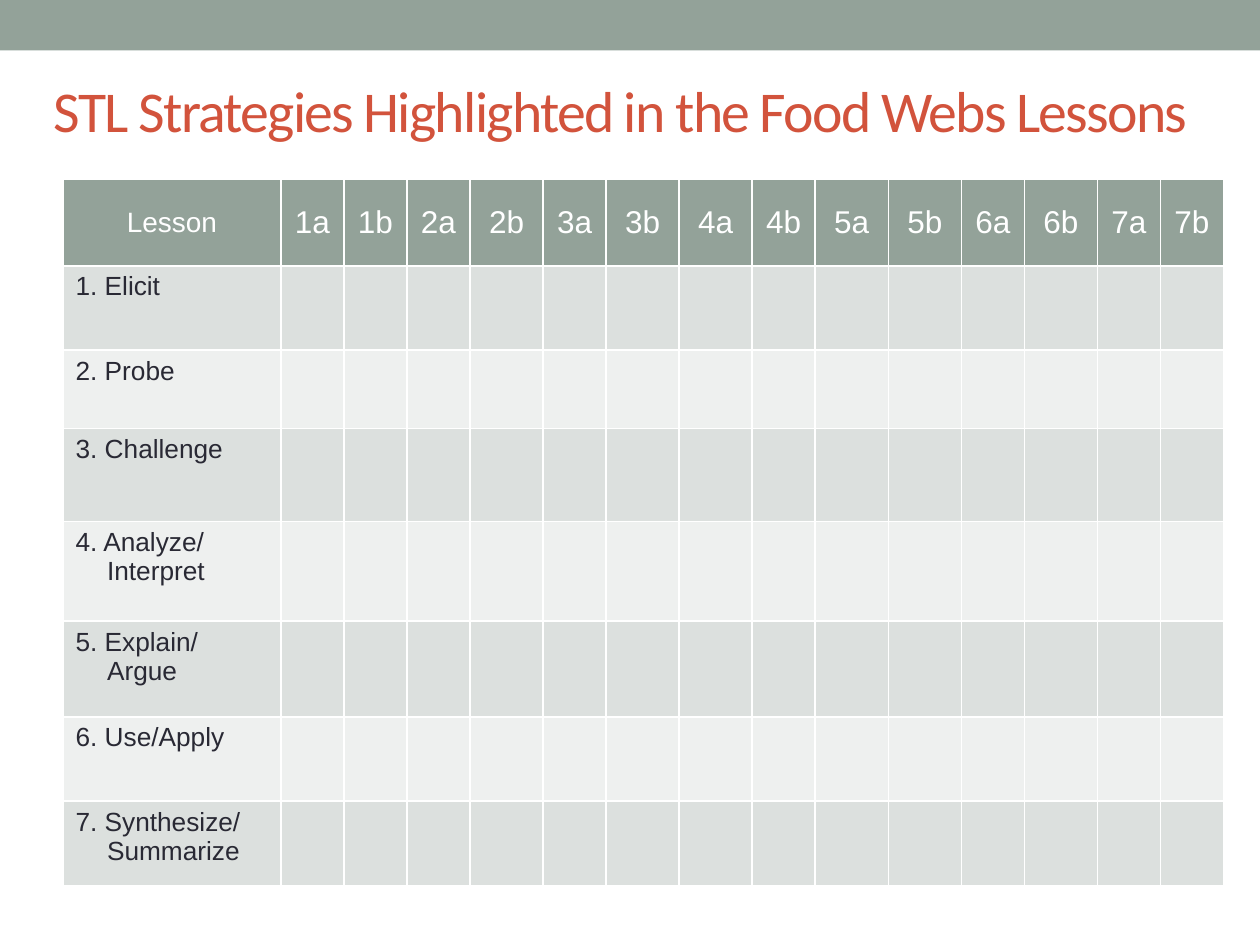
from lxml import etree
from pptx import Presentation
from pptx import util as u
from pptx.dml.color import RGBColor
from pptx.enum import shapes, text
from pptx.oxml.ns import qn

TITLE = "STL Strategies Highlighted in the Food Webs Lessons"
LESSONS = [f"{number}{part}" for number in range(1, 8) for part in "ab"]
STRATEGIES = ["1. Elicit", "2. Probe", "3. Challenge", "4. Analyze/ Interpret",
              "5. Explain/ Argue", "6. Use/Apply", "7. Synthesize/\vSummarize"]

SAGE, RUST, INK, WHITE = "93A299", "D2533C", "292934", "FFFFFF"
BANDS = ["DCE0DE", "EEF0EF"]

STRATEGY_WIDTH, NARROW, WIDE = 1.73, 0.5, 0.58
WIDE_LESSONS = {"2b", "3b", "4a", "5a", "5b", "6b"}
ROW_HEIGHTS = [0.69, 0.67, 0.62, 0.74, 0.79, 0.76, 0.67, 0.67]
TABLE_LEFT, TABLE_TOP = 0.5, 1.42


def color(value):
    return RGBColor.from_string(value)


def write(frame, words, size, fill, font="Arial", align=text.PP_ALIGN.LEFT,
          before=0, after=0, hanging=0, spacing=0):
    """Fill a text frame with one formatted paragraph."""
    paragraph = frame.paragraphs[0]
    paragraph.text = words
    paragraph.alignment = align
    paragraph.space_before, paragraph.space_after = u.Pt(before), u.Pt(after)
    if hanging:
        properties = paragraph._p.get_or_add_pPr()
        properties.set("marL", str(u.Inches(hanging)))
        properties.set("indent", str(-u.Inches(hanging)))
    for run in paragraph.runs:
        run.font.name, run.font.size = font, u.Pt(size)
        run.font.color.rgb = color(fill)
        if spacing:
            run.font._element.set("spc", str(spacing * 100))


def paint(cell, fill):
    """Give a cell its fill and thin white borders."""
    properties = cell._tc.get_or_add_tcPr()
    for side in ("lnL", "lnR", "lnT", "lnB"):
        line = etree.SubElement(properties, qn(f"a:{side}"), w=str(u.Pt(1)))
        solid = etree.SubElement(line, qn("a:solidFill"))
        etree.SubElement(solid, qn("a:srgbClr"), val=WHITE)
    cell.fill.solid()
    cell.fill.fore_color.rgb = color(fill)


def add_banner(slide, width):
    banner = slide.shapes.add_shape(shapes.MSO_SHAPE.RECTANGLE, 0, 0, width, u.Inches(0.4))
    banner.shadow.inherit = False
    banner.fill.solid()
    banner.fill.fore_color.rgb = color(SAGE)
    banner.line.fill.background()


def add_title(slide):
    box = slide.shapes.add_textbox(*map(u.Inches, (0.33, 0.33, 9.42, 1.08)))
    box.text_frame.word_wrap = True
    box.text_frame.vertical_anchor = text.MSO_ANCHOR.MIDDLE
    write(box.text_frame, TITLE, 33, RUST, font="Calibri", spacing=-1)


def add_strategy_table(slide):
    widths = [STRATEGY_WIDTH] + [WIDE if lesson in WIDE_LESSONS else NARROW
                                 for lesson in LESSONS]
    table = slide.shapes.add_table(
        len(ROW_HEIGHTS), len(widths), u.Inches(TABLE_LEFT), u.Inches(TABLE_TOP),
        u.Inches(sum(widths)), u.Inches(sum(ROW_HEIGHTS))).table
    for column, width in zip(table.columns, widths):
        column.width = u.Inches(width)
    for index, (row, height) in enumerate(zip(table.rows, ROW_HEIGHTS)):
        row.height = u.Inches(height)
        for cell in row.cells:
            paint(cell, BANDS[(index - 1) % 2] if index else SAGE)
    for column, heading in enumerate(["Lesson"] + LESSONS):
        cell = table.cell(0, column)
        cell.vertical_anchor = text.MSO_ANCHOR.MIDDLE
        write(cell.text_frame, heading, 18 if column else 16, WHITE,
              align=text.PP_ALIGN.CENTER, before=12)
    for row, strategy in enumerate(STRATEGIES, start=1):
        write(table.cell(row, 0).text_frame, strategy, 15, INK, after=12, hanging=0.25)


def main():
    presentation = Presentation()
    presentation.slide_width, presentation.slide_height = u.Inches(10), u.Inches(7.5)
    slide = presentation.slides.add_slide(presentation.slide_layouts[6])
    add_banner(slide, presentation.slide_width)
    add_title(slide)
    add_strategy_table(slide)
    presentation.save("out.pptx")


if __name__ == "__main__":
    main()
